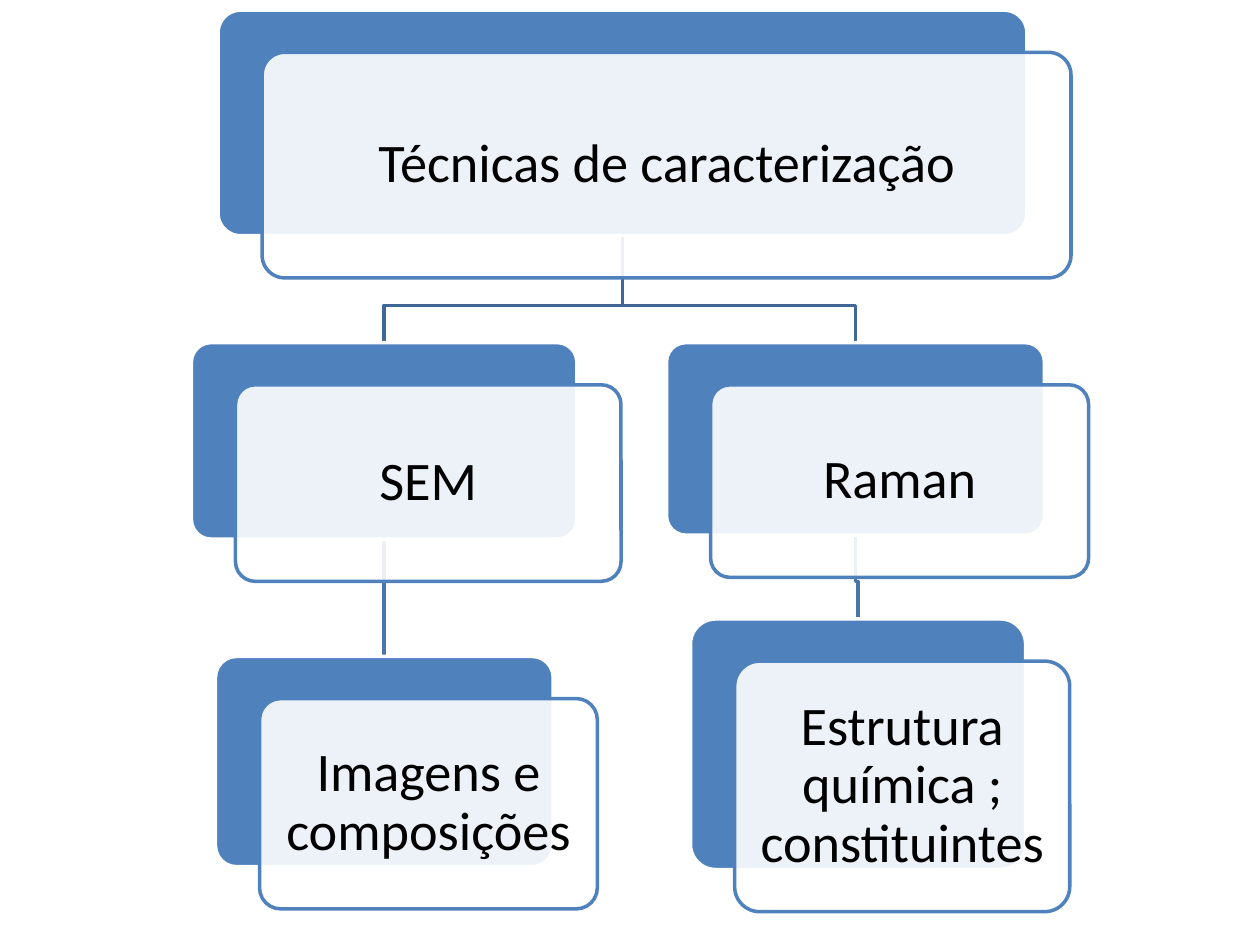
import dataclasses

import lxml.etree
import pptx
import pptx.dml.color
import pptx.enum.shapes
import pptx.enum.text
import pptx.oxml.ns
import pptx.util

BLUE = pptx.dml.color.RGBColor(0x4F, 0x81, 0xBD)
WHITE = pptx.dml.color.RGBColor(0xFF, 0xFF, 0xFF)
BLACK = pptx.dml.color.RGBColor(0x00, 0x00, 0x00)
UPPER_LINK = pptx.dml.color.RGBColor(0x3F, 0x67, 0x97)
LOWER_LINK = pptx.dml.color.RGBColor(0x48, 0x75, 0xAC)

PANEL_SHIFT_X = 25.2
PANEL_SHIFT_Y = 24.1
BEND_ABOVE_CHILD = 21.3
LINE_WIDTH = 2
PANEL_INSET = 9.4


@dataclasses.dataclass
class Node:
    """A labelled box of the hierarchy, measured in points."""

    label: str
    left: float
    top: float
    width: float
    height: float

    @property
    def center(self):
        """Return the horizontal centre."""
        return self.left + self.width / 2

    @property
    def bottom(self):
        """Return the lower edge."""
        return self.top + self.height


def add_link(slide, parent, child, color):
    """Join a parent's bottom to a child's top, bending where they are offset."""
    pt = pptx.util.Pt
    start = pt(parent.center), pt(parent.bottom)
    end = pt(child.center), pt(child.top)
    if abs(parent.center - child.center) < 0.5:
        link = slide.shapes.add_connector(
            pptx.enum.shapes.MSO_CONNECTOR.STRAIGHT, *start, start[0], end[1])
        lxml.etree.SubElement(link._element.spPr, pptx.oxml.ns.qn("a:effectLst"))
    else:
        bend = pt(child.top - BEND_ABOVE_CHILD)
        route = slide.shapes.build_freeform(*start)
        route.add_line_segments([(start[0], bend), (end[0], bend), end], close=False)
        link = route.convert_to_shape()
        link.fill.background()
        link.shadow.inherit = False
    link.line.color.rgb = color
    link.line.width = pt(LINE_WIDTH)


def add_rounded_box(slide, left, top, width, height, fill, outline):
    """Add a rounded rectangle with a solid fill and outline."""
    box = slide.shapes.add_shape(
        pptx.enum.shapes.MSO_SHAPE.ROUNDED_RECTANGLE,
        *map(pptx.util.Pt, (left, top, width, height)))
    box.adjustments[0] = 0.1
    box.shadow.inherit = False
    box.fill.solid()
    box.fill.fore_color.rgb = fill
    box.line.color.rgb = outline
    box.line.width = pptx.util.Pt(LINE_WIDTH)
    return box


def set_opacity(box, percent):
    """Make the solid fill of a box partly transparent."""
    fill_color = box._element.spPr.find(pptx.oxml.ns.qn("a:solidFill"))[0]
    alpha = lxml.etree.SubElement(fill_color, pptx.oxml.ns.qn("a:alpha"))
    alpha.set("val", str(percent * 1000))


def add_label(panel, label):
    """Write a centred label in a panel."""
    frame = panel.text_frame
    frame.word_wrap = True
    frame.vertical_anchor = pptx.enum.text.MSO_ANCHOR.MIDDLE
    frame.margin_left = frame.margin_right = pptx.util.Pt(PANEL_INSET)
    frame.margin_top = frame.margin_bottom = pptx.util.Pt(PANEL_INSET)
    paragraph = frame.paragraphs[0]
    paragraph.text = label
    paragraph.alignment = pptx.enum.text.PP_ALIGN.CENTER
    paragraph.line_spacing = 0.9
    paragraph.font.name = "Calibri"
    paragraph.font.size = pptx.util.Pt(31)
    paragraph.font.color.rgb = BLACK


def add_node(slide, node):
    """Add a blue backing box and its shifted, labelled panel."""
    add_rounded_box(slide, node.left, node.top, node.width, node.height, BLUE, WHITE)
    panel = add_rounded_box(
        slide, node.left + PANEL_SHIFT_X, node.top + PANEL_SHIFT_Y,
        node.width, node.height, WHITE, BLUE)
    set_opacity(panel, 90)
    add_label(panel, node.label)


def main():
    """Build the hierarchy of characterization techniques."""
    presentation = pptx.Presentation()
    presentation.slide_width = pptx.util.Pt(720)
    presentation.slide_height = pptx.util.Pt(540)
    slide = presentation.slides.add_slide(presentation.slide_layouts[6])

    techniques = Node("Técnicas de caracterização", 124.6, 5.8, 462.2, 128.9)
    sem = Node("SEM", 109.4, 195.8, 220.3, 112.3)
    images = Node("Imagens e composições", 123.1, 375.1, 193, 120.2)
    raman = Node("Raman", 380.9, 195.8, 216, 110)
    structure = Node("Estrutura química ; constituintes", 394.6, 353.7, 191.5, 143.2)

    links = [
        (raman, structure, LOWER_LINK),
        (techniques, raman, UPPER_LINK),
        (sem, images, LOWER_LINK),
        (techniques, sem, UPPER_LINK),
    ]
    for parent, child, color in links:
        add_link(slide, parent, child, color)
    for node in (techniques, sem, images, raman, structure):
        add_node(slide, node)
    presentation.save("out.pptx")


if __name__ == "__main__":
    main()
